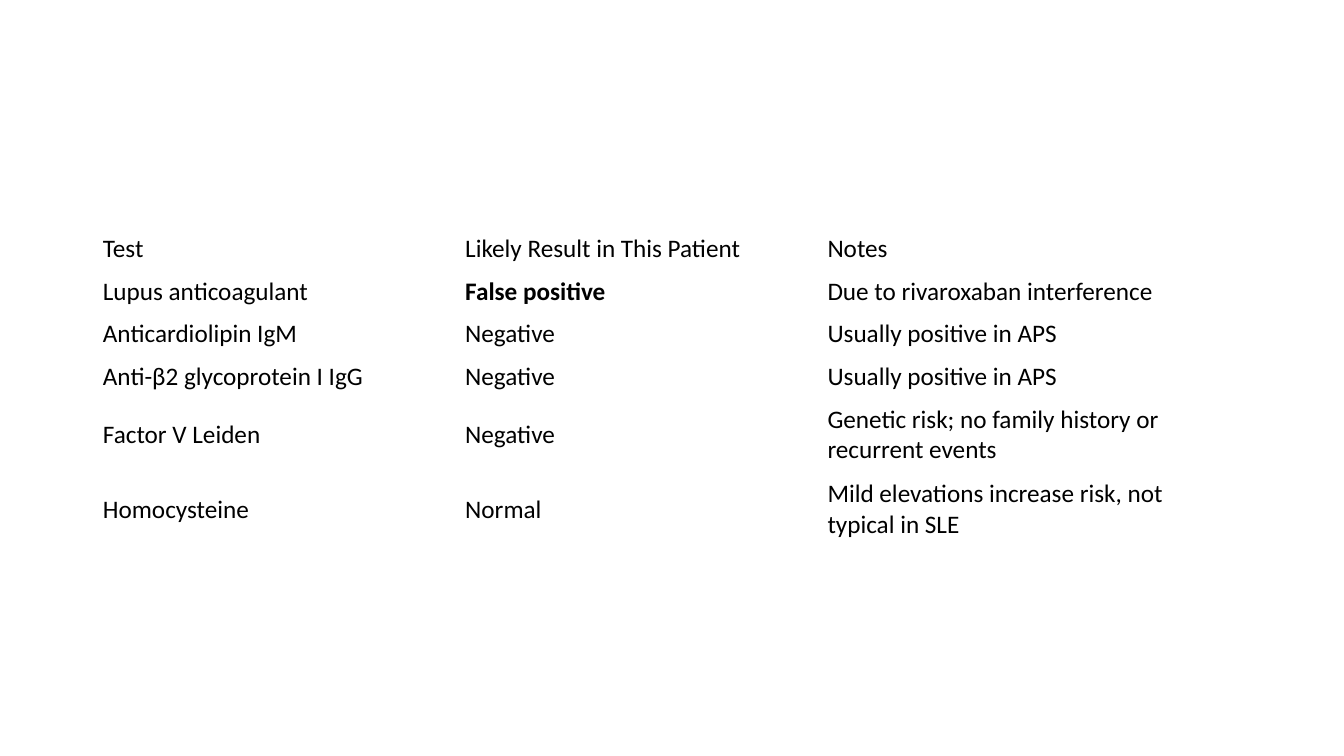
"""Builds a slide with a table of thrombophilia tests and their likely results."""
from pptx import Presentation
from pptx.dml.color import RGBColor
from pptx.enum.text import MSO_ANCHOR
from pptx.util import Cm, Pt

MIDDLE = MSO_ANCHOR.MIDDLE
COLORS = {"text": "000000"}
FONT = "Calibri"
BLANK_LAYOUT = 6
ROW_HEIGHTS = [1.07, 1.07, 1.07, 1.07, 1.88, 1.88]
EMPHASIZED = "False positive"
TESTS = [
    ("Test", "Likely Result in This Patient", "Notes"),
    ("Lupus anticoagulant", EMPHASIZED, "Due to rivaroxaban interference"),
    ("Anticardiolipin IgM", "Negative", "Usually positive in APS"),
    ("Anti-β2 glycoprotein I IgG", "Negative", "Usually positive in APS"),
    ("Factor V Leiden", "Negative", "Genetic risk; no family history or recurrent events"),
    ("Homocysteine", "Normal", "Mild elevations increase risk, not typical in SLE"),
]


def fill_cell(cell, text):
    """Write one run of text into an unfilled, vertically centred cell."""
    cell.fill.background()
    cell.vertical_anchor = MIDDLE
    span = cell.text_frame.paragraphs[0].add_run()
    span.text = text
    span.font.name = FONT
    span.font.size = Pt(18)
    span.font.bold = text == EMPHASIZED
    span.font.color.rgb = RGBColor.from_string(COLORS["text"])


def add_test_table(page, left, top, width):
    """Place the test table with equal columns across the given width."""
    column_count = len(TESTS[0])
    frame = page.shapes.add_table(
        len(TESTS), column_count, Cm(left), Cm(top), Cm(width), Cm(sum(ROW_HEIGHTS))
    )
    table = frame.table
    table.first_row = False
    table.horz_banding = False
    for column in table.columns:
        column.width = Cm(width / column_count)
    for row, height, texts in zip(table.rows, ROW_HEIGHTS, TESTS):
        row.height = Cm(height)
        for cell, text in zip(row.cells, texts):
            fill_cell(cell, text)


def main():
    """Create the deck with its single page and save it."""
    deck = Presentation()
    deck.slide_width = Cm(33.87)
    deck.slide_height = Cm(19.05)
    page = deck.slides.add_slide(deck.slide_layouts[BLANK_LAYOUT])
    add_test_table(page, left=2.34, top=5.74, width=27.39)
    deck.save("out.pptx")


if __name__ == "__main__":
    main()
